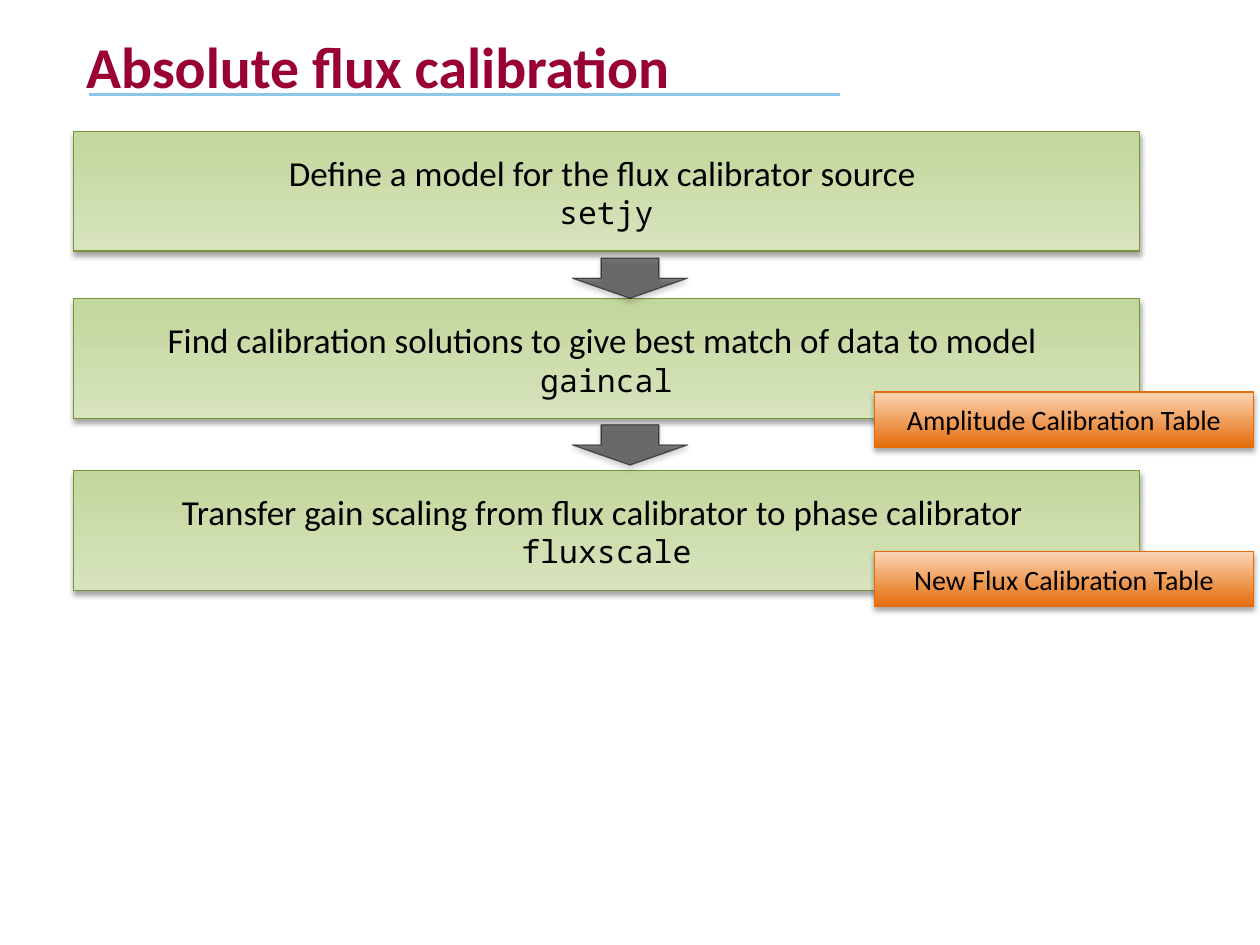
from lxml import etree
from pptx import Presentation
from pptx.dml.color import RGBColor
from pptx.enum.shapes import MSO_CONNECTOR, MSO_SHAPE
from pptx.enum.text import MSO_ANCHOR, MSO_AUTO_SIZE, PP_ALIGN
from pptx.oxml import parse_xml
from pptx.oxml.ns import nsdecls, qn
from pptx.util import Pt

RECTANGLE, RIGHT_ARROW = MSO_SHAPE.RECTANGLE, MSO_SHAPE.RIGHT_ARROW
STRAIGHT = MSO_CONNECTOR.STRAIGHT
MIDDLE, NO_AUTOFIT = MSO_ANCHOR.MIDDLE, MSO_AUTO_SIZE.NONE
LEFT, CENTER = PP_ALIGN.LEFT, PP_ALIGN.CENTER

COLORS = {
    "title": "990033",
    "rule": "8CC7EA",
    "text": "000000",
    "step_top": "C3D69B",
    "step_bottom": "D7E4BD",
    "step_line": "77933C",
    "table_top": "FCD5B5",
    "table_bottom": "E46C0A",
    "table_line": "E46C0A",
    "arrow": "000000",
    "shadow": "000000",
}
SANS, MONO = "Calibri", "Noto Sans Mono"

# Top of the box, description, task name
STEPS = [
    (75, "Define a model for the flux calibrator source ", "setjy"),
    (170.75, "Find calibration solutions to give best match of data to model ", "gaincal"),
    (268.75, "Transfer gain scaling from flux calibrator to phase calibrator ", "fluxscale"),
]
ARROW_CENTERS = [159, 254.25]
TABLES = [(224, "Amplitude Calibration Table"), (315, "New Flux Calibration Table")]


def rgb(name):
    return RGBColor.from_string(COLORS[name])


class FlowSlide:
    def __init__(self, presentation):
        self.slide = presentation.slides.add_slide(presentation.slide_layouts[5])

    def format_paragraph(self, paragraph, size, font=SANS, color="text", bold=False, align=CENTER):
        paragraph.alignment = align
        for run in paragraph.runs:
            run.font.name = font
            run.font.size = Pt(size)
            run.font.bold = bold
            run.font.color.rgb = rgb(color)

    def add_title(self, text):
        title = self.slide.shapes.title
        title.left, title.top, title.width, title.height = Pt(42), Pt(0), Pt(571), Pt(75)
        frame = title.text_frame
        frame.text = text
        frame.auto_size = NO_AUTOFIT
        frame.vertical_anchor = MIDDLE
        self.format_paragraph(frame.paragraphs[0], 33, color="title", bold=True, align=LEFT)

    def add_rule(self, left, right, y):
        rule = self.slide.shapes.add_connector(STRAIGHT, Pt(left), Pt(y), Pt(right), Pt(y))
        rule.line.color.rgb = rgb("rule")
        rule.line.width = Pt(2.25)
        etree.SubElement(rule._element.spPr, qn("a:effectLst"))

    def add_shadowed_shape(self, kind, left, top, width, height, line_color):
        shape = self.slide.shapes.add_shape(kind, Pt(left), Pt(top), Pt(width), Pt(height))
        shape.line.color.rgb = rgb(line_color)
        shape.line.width = Pt(0.75)
        shape.shadow.inherit = False
        shape._element.spPr.find(qn("a:effectLst")).append(parse_xml(
            f'<a:outerShdw {nsdecls("a")} blurRad="{Pt(3.1)}" dist="{Pt(1.8)}" '
            f'dir="5400000" rotWithShape="0"><a:srgbClr val="{COLORS["shadow"]}">'
            '<a:alpha val="35000"/></a:srgbClr></a:outerShdw>'))
        return shape

    def add_box(self, left, top, width, height, palette, lines):
        """Add a gradient box; lines holds (text, size, font) for each paragraph."""
        box = self.add_shadowed_shape(RECTANGLE, left, top, width, height, f"{palette}_line")
        box.fill.gradient()
        box.fill.gradient_angle = 270
        for stop, end in zip(box.fill.gradient_stops, ("top", "bottom")):
            stop.color.rgb = rgb(f"{palette}_{end}")
        frame = box.text_frame
        frame.word_wrap = True
        frame.vertical_anchor = MIDDLE
        frame.text = "\n".join(text for text, _, _ in lines)
        for paragraph, (_, size, font) in zip(frame.paragraphs, lines):
            self.format_paragraph(paragraph, size, font)

    def add_down_arrow(self, center_x, center_y, length=23, breadth=66):
        arrow = self.add_shadowed_shape(RIGHT_ARROW, center_x - length / 2,
                                        center_y - breadth / 2, length, breadth, "arrow")
        arrow.rotation = 90
        arrow.fill.solid()
        arrow.fill.fore_color.rgb = rgb("arrow")
        for color in arrow._element.spPr.findall(f".//{qn('a:solidFill')}/{qn('a:srgbClr')}"):
            etree.SubElement(color, qn("a:alpha"), val="50000")


def main():
    presentation = Presentation()
    presentation.slide_width, presentation.slide_height = Pt(720), Pt(540)
    flow = FlowSlide(presentation)
    flow.add_title("Absolute flux calibration")
    flow.add_rule(51, 480, 54)
    for top, description, task in STEPS:
        flow.add_box(42, top, 609, 68.5, "step", [(description, 20, SANS), (task, 18, MONO)])
    for center_y in ARROW_CENTERS:
        flow.add_down_arrow(360, center_y)
    for top, name in TABLES:
        flow.add_box(499.75, top, 216.5, 31.5, "table", [(name, 16, SANS)])
    presentation.save("out.pptx")


if __name__ == "__main__":
    main()
